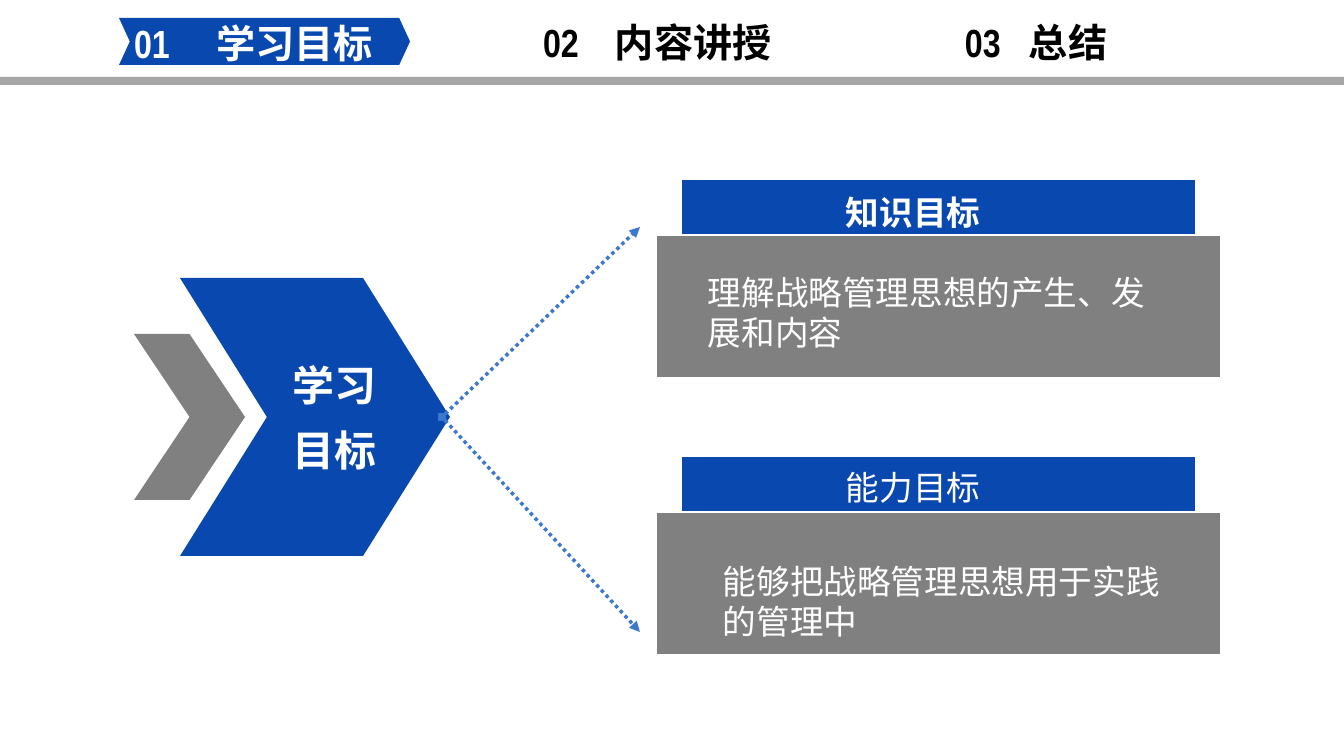
from lxml.etree import SubElement
from pptx import Presentation
from pptx.dml.color import RGBColor
from pptx.enum.dml import MSO_LINE
from pptx.enum.shapes import MSO_CONNECTOR, MSO_SHAPE
from pptx.enum.text import MSO_ANCHOR, MSO_AUTO_SIZE, PP_ALIGN
from pptx.oxml.ns import qn
from pptx.util import Pt

EMU_PER_PX = 914400 / 100.8
COLORS = {"blue": "0848AF", "gray": "808080", "rule": "A6A6A6",
          "arrow": "3C78CE", "white": "FFFFFF", "black": "000000"}
CJK_FONT = "Noto Sans CJK SC"
CARD_PITCH = 277


def px(length):
    """Turn pixels into EMU."""
    return round(length * EMU_PER_PX)


def color(key):
    """Look up a palette colour."""
    return RGBColor.from_string(COLORS[key])


def add_block(slide, preset, box, fill, outline=False, adjustment=None):
    """Add a flat filled shape, with a white outline if asked."""
    block = slide.shapes.add_shape(preset, *map(px, box))
    block.shadow.inherit = False
    block.fill.solid()
    block.fill.fore_color.rgb = color(fill)
    if outline:
        block.line.color.rgb = color("white")
        block.line.width = Pt(2)
    else:
        block.line.fill.background()
    if adjustment is not None:
        block.adjustments[0] = adjustment
    return block


def write(holder, words, size, ink="white", font=CJK_FONT, bold=False, spacing=None):
    """Fill a text holder with one left-aligned formatted paragraph."""
    frame = holder.text_frame
    frame.word_wrap = True
    frame.auto_size = MSO_AUTO_SIZE.NONE
    frame.text = words
    paragraph = frame.paragraphs[0]
    paragraph.alignment = PP_ALIGN.LEFT
    if spacing:
        paragraph.line_spacing = spacing
    for run in paragraph.runs:
        run.font.size = Pt(size)
        run.font.bold = bold
        run.font.name = font
        run.font.color.rgb = color(ink)
        SubElement(run.font._element, qn("a:ea"), typeface=CJK_FONT)


def add_words(slide, box, words, size, **style):
    """Add a text box holding one paragraph."""
    write(slide.shapes.add_textbox(*map(px, box)), words, size, **style)


def write_section(holder, box, words, label_offset, ink):
    """Place a numbered section name, its label aligned at a tab stop."""
    holder.left, holder.top, holder.width, holder.height = map(px, box)
    write(holder, words, 28, ink, "Arial Narrow", True)
    frame = holder.text_frame
    frame.vertical_anchor = MSO_ANCHOR.MIDDLE
    frame.margin_left = frame.margin_right = frame.margin_top = frame.margin_bottom = 0
    tabs = SubElement(frame.paragraphs[0]._p.get_or_add_pPr(), qn("a:tabLst"))
    SubElement(tabs, qn("a:tab"), pos=str(px(label_offset)), algn="l")


def add_navigation(slide, box):
    """Draw the section bar with the current section highlighted."""
    left, top, width, height = box
    add_block(slide, MSO_SHAPE.RECTANGLE, (left, top + 77, width, 8), "rule")
    marker = add_block(slide, MSO_SHAPE.CHEVRON, (left + 119, top + 18, 291, 47),
                       "blue", adjustment=0.23)
    title = slide.shapes.title
    marker._element.addnext(title._element)
    write_section(title, (left + 134, top + 19, 317, 47), "01\t学习目标", 82, "white")
    for words, x, label_offset in (("02\t内容讲授", 543, 72), ("03\t总结", 965, 64)):
        section_box = (left + x, top + 18, 380 if x < 900 else 190, 47)
        section = slide.shapes.add_textbox(*map(px, section_box))
        write_section(section, section_box, words, label_offset, "black")


def add_topic(slide, box):
    """Draw the two chevrons that carry the topic."""
    left, top, width, height = box
    add_block(slide, MSO_SHAPE.CHEVRON, (left + 46, top, width - 46, height),
              "blue", adjustment=0.322)
    add_block(slide, MSO_SHAPE.CHEVRON, (left, top + 56, 111, 166), "gray", adjustment=0.5)
    add_words(slide, (left + 149, top + 61, 127, 142), "学习目标", 30,
              bold=True, spacing=1.3)


def add_arrow(slide, start, end):
    """Draw a dotted arrow from the topic towards a goal."""
    arrow = slide.shapes.add_connector(MSO_CONNECTOR.STRAIGHT, *map(px, start + end))
    arrow.line.color.rgb = color("arrow")
    arrow.line.width = Pt(2.5)
    arrow.line.dash_style = MSO_LINE.ROUND_DOT
    line = arrow.line._get_or_add_ln()
    SubElement(line, qn("a:headEnd"), type="diamond")
    SubElement(line, qn("a:tailEnd"), type="triangle")
    SubElement(arrow._element.spPr, qn("a:effectLst"))


def add_goal(slide, box, heading, heading_dy, detail, detail_dx, detail_dy, **heading_style):
    """Draw a goal card: a heading bar over a detail panel."""
    left, top, width, height = box
    add_block(slide, MSO_SHAPE.RECTANGLE, (left, top + 56, width, height - 56), "gray", True)
    add_block(slide, MSO_SHAPE.RECTANGLE, (left + 25, top, width - 51, 56), "blue", True)
    add_words(slide, (left + 180, top + heading_dy, 238, 62), heading, 24,
              spacing=1.3, **heading_style)
    add_words(slide, (left + detail_dx, top + detail_dy, 484, 92), detail, 24)


def main():
    """Build and save the slide."""
    deck = Presentation()
    deck.slide_width, deck.slide_height = px(1344), px(756)
    slide = deck.slides.add_slide(deck.slide_layouts[5])
    add_navigation(slide, (0, 0, 1344, 85))
    add_topic(slide, (134, 278, 316, 278))
    for end in ((640, 227), (640, 632)):
        add_arrow(slide, (442, 417), end)
    add_goal(slide, (656, 179, 566, 199), "知识目标", -4,
             "理解战略管理思想的产生、发展和内容", 42, 88, font="Arial", bold=True)
    add_goal(slide, (656, 179 + CARD_PITCH, 566, 199), "能力目标", -6,
             "能够把战略管理思想用于实践的管理中", 57, 100)
    deck.save("out.pptx")


if __name__ == "__main__":
    main()
